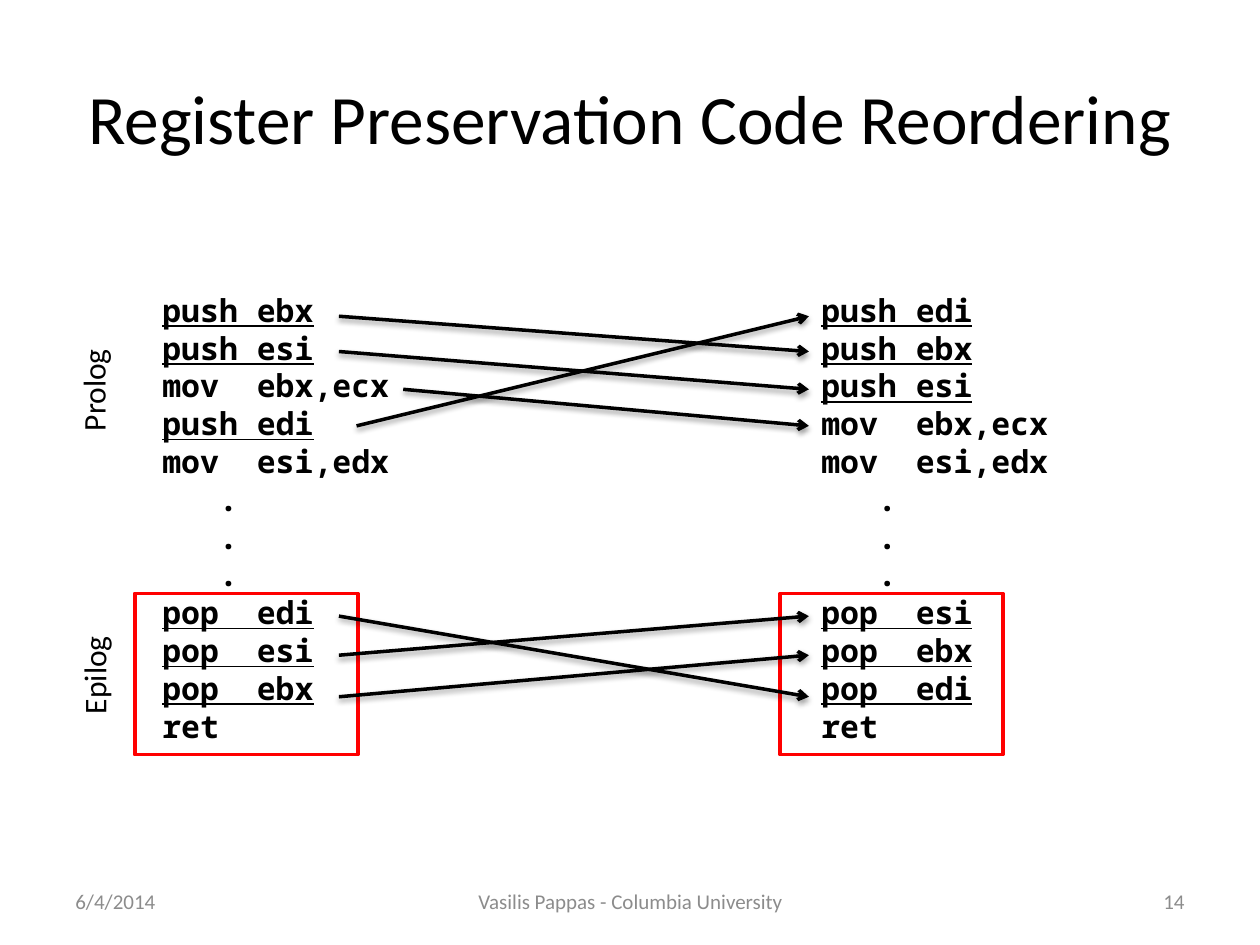
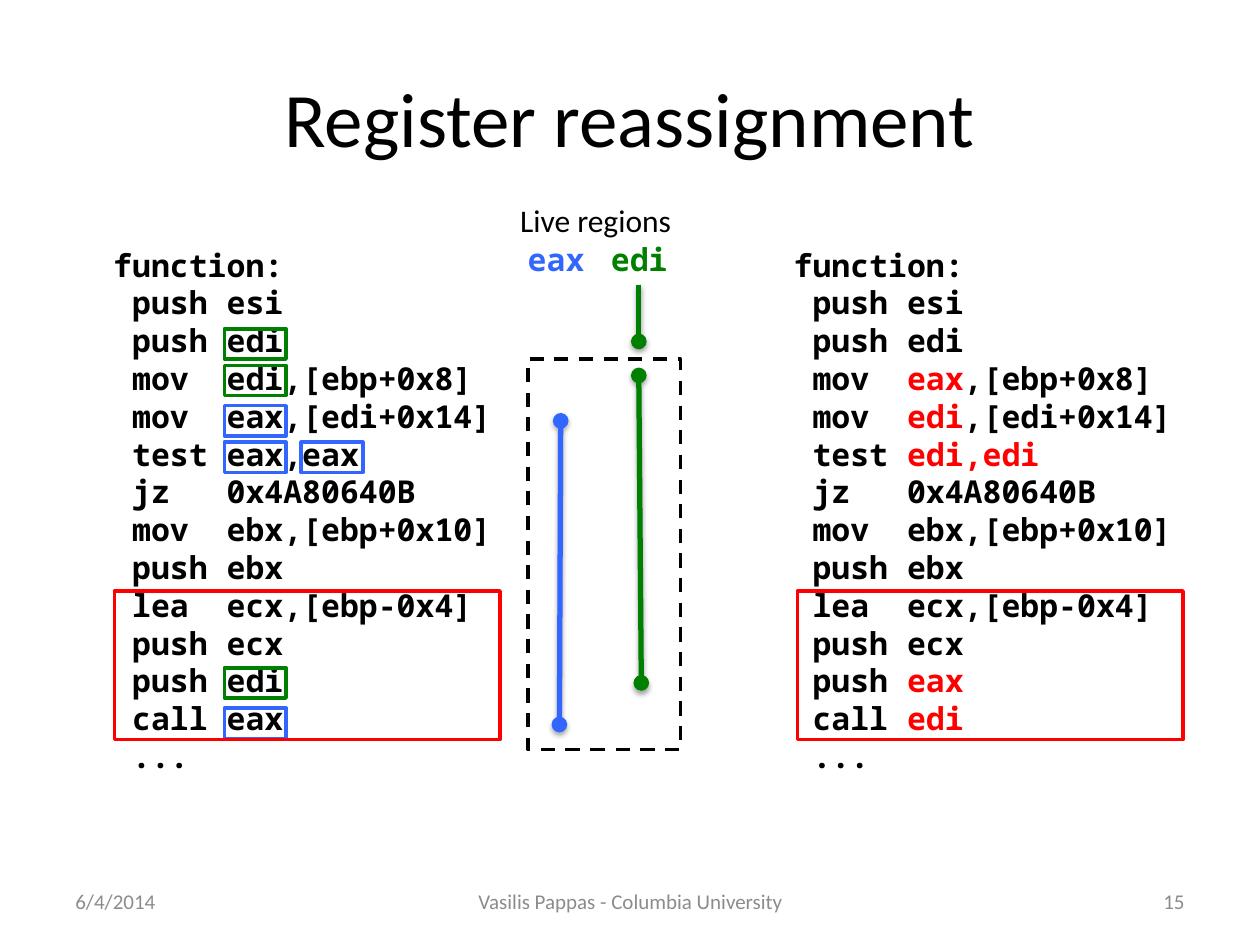
from lxml.etree import SubElement as Sub
from pptx import Presentation
from pptx.dml.color import RGBColor as RGB
from pptx.enum.dml import MSO_LINE as Dash
from pptx.enum.shapes import MSO_CONNECTOR as Conn, MSO_SHAPE as Form
from pptx.enum.text import MSO_ANCHOR as Anchor, PP_ALIGN as Align
from pptx.oxml.ns import qn
from pptx.util import Inches, Pt

HUES = {"ink": "000000", "gray": "8C8C8C", "red": "FF0000",
        "blue": "3366FF", "green": "008000"}
SANS = {"name": "Calibri", "size": Pt(18)}
MONO = {"name": "Noto Sans Mono", "size": Pt(18), "bold": True}
SMALL = SANS | {"size": Pt(12)}
CHAR = 0.15  # width of one code character, in inches


def rgb(hue):
    return RGB.from_string(HUES[hue])


class Deck:
    """Holds the style and the current slide."""

    def __init__(self):
        self.prs = Presentation()
        self.prs.slide_width, self.prs.slide_height = Inches(10), Inches(7.5)
        self.slide = None

    def page(self, title, number, size=44):
        self.slide = self.prs.slides.add_slide(self.prs.slide_layouts[6])
        self.text((0.5, 0.3, 9, 1.25), title, SANS | {"size": Pt(size)},
                  align=Align.CENTER, anchor=Anchor.MIDDLE)
        feet = (((0.5, 2.33), "6/4/2014", Align.LEFT),
                ((3.42, 3.17), "Vasilis Pappas - Columbia University", Align.CENTER),
                ((7.17, 2.33), str(number), Align.RIGHT))
        for (left, width), words, align in feet:
            self.text((left, 6.95, width, 0.4), words, SMALL, "gray",
                      align=align, anchor=Anchor.MIDDLE)

    def frame(self, at, anchor=Anchor.TOP, wrap=True):
        box = self.slide.shapes.add_textbox(*map(Inches, at))
        box.text_frame.word_wrap = wrap
        box.text_frame.vertical_anchor = anchor
        return box

    def run(self, para, words, style, hue="ink"):
        run = para.add_run()
        run.text = words
        for key, value in style.items():
            setattr(run.font, key, value)
        run.font.color.rgb = rgb(hue)

    def text(self, at, words, style=SANS, hue="ink", align=Align.LEFT,
             anchor=Anchor.TOP, wrap=True, turn=0):
        box = self.frame(at, anchor, wrap)
        box.rotation = turn
        para = box.text_frame.paragraphs[0]
        para.alignment = align
        self.run(para, words, style, hue)

    def code(self, at, lines, marked=()):
        """Leading spaces become indents; words between stars turn red."""
        body = self.frame(at).text_frame
        for row, line in enumerate(lines):
            para = body.paragraphs[0] if row == 0 else body.add_paragraph()
            words = line.lstrip()
            indent = len(line) - len(words)
            para._p.get_or_add_pPr().set("marL", str(Inches(indent * CHAR)))
            style = MONO | {"underline": words.split()[0] in marked}
            for part, piece in enumerate(words.split("*")):
                if piece:
                    self.run(para, piece, style, "red" if part % 2 else "ink")

    def rect(self, at, hue="red", dash=None):
        box = self.slide.shapes.add_shape(Form.RECTANGLE, *map(Inches, at))
        box.shadow.inherit = False
        box.fill.background()
        box.line.color.rgb = rgb(hue)
        box.line.width = Pt(2)
        if dash:
            box.line.dash_style = dash

    def line(self, start, end, hue="ink", width=2, head=None, tail="arrow"):
        link = self.slide.shapes.add_connector(
            Conn.STRAIGHT, *map(Inches, start + end))
        link.line.color.rgb = rgb(hue)
        link.line.width = Pt(width)
        stroke = link.line._get_or_add_ln()
        for tag, kind in (("a:headEnd", head), ("a:tailEnd", tail)):
            if kind:
                Sub(stroke, qn(tag), type=kind)
        # Soft shadow straight below the line
        glow = Sub(Sub(link._element.spPr, qn("a:effectLst")), qn("a:outerShdw"),
                   blurRad=str(Pt(3.1)), dist=str(Pt(1.7)), dir="5400000",
                   rotWithShape="0")
        tint = Sub(glow, qn("a:srgbClr"), val=HUES["ink"])
        Sub(tint, qn("a:alpha"), val="37000")


def reorder(deck):
    deck.page("Register Preservation Code Reordering", 14, 39.6)
    body = ["mov  esi,edx"] + ["   ."] * 3
    before = ["push ebx", "push esi", "mov  ebx,ecx", "push edi", *body,
              "pop  edi", "pop  esi", "pop  ebx", "ret"]
    after = ["push edi", "push ebx", "push esi", "mov  ebx,ecx", *body,
             "pop  esi", "pop  ebx", "pop  edi", "ret"]

    # Code columns with the epilog framed
    for left, edge, lines in ((1.19, 1.07, before), (6.42, 6.19, after)):
        deck.code((left, 2.26, 2.46, 3.74), lines, ("push", "pop"))
        deck.rect((edge, 4.71, 1.77, 1.28))

    # Each moved instruction points to its new row
    rows = {0: 2.51, 1: 2.79, 2: 3.09, 3: 3.38, 8: 4.89, 9: 5.2, 10: 5.53}
    starts = {2: 3.2, 3: 2.83}
    for row, top in rows.items():
        goal = rows[after.index(before[row])]
        deck.line((starts.get(row, 2.69), top), (6.42, goal))

    # Side labels
    for at, words in (((0.31, 2.89, 0.86, 0.4), "Prolog"),
                      ((0.33, 5.15, 0.83, 0.4), "Epilog")):
        deck.text(at, words, wrap=False, turn=270)


def reassign(deck):
    deck.page("Register reassignment", 15)

    # Live regions
    deck.line((4.45, 3.34), (4.44, 5.75), "blue", 3, "oval", "oval")
    deck.line((5.07, 2.98), (5.09, 5.42), "green", 3, "oval", "oval")
    deck.line((5.07, 2.26), (5.07, 2.71), "green", 3, tail="oval")
    deck.text((4.03, 1.55, 1.42, 0.4), "Live regions", wrap=False)
    for left, name, hue in ((4.09, "eax", "blue"), (4.75, "edi", "green")):
        deck.text((left, 1.86, 0.66, 0.4), name, MONO, hue, wrap=False)
    deck.rect((4.19, 2.85, 1.21, 3.1), "ink", Dash.DASH)

    # Code before and after the swap
    before = ["function:", " push esi", " push edi", " mov  edi,[ebp+0x8]",
              " mov  eax,[edi+0x14]", " test eax,eax", " jz   0x4A80640B",
              " mov  ebx,[ebp+0x10]", " push ebx", " lea  ecx,[ebp-0x4]",
              " push ecx", " push edi", " call eax", " ..."]
    swaps = {3: " mov  *eax*,[ebp+0x8]", 4: " mov  *edi*,[edi+0x14]",
             5: " test *edi,edi*", 11: " push *eax*", 12: " call *edi*"}
    after = [swaps.get(row, line) for row, line in enumerate(before)]
    deck.code((0.8, 1.9, 3.29, 4.34), before)
    deck.code((6.2, 1.9, 3.29, 4.34), after)

    # Boxes around the registers, then around the gadget
    spots = {"blue": ((1.78, 5.62), (1.78, 3.51), (2.39, 3.51), (1.78, 3.22)),
             "green": ((1.78, 5.3), (1.78, 2.9), (1.78, 2.61))}
    for hue, places in spots.items():
        for left, top in places:
            deck.rect((left, top, 0.49, 0.24), hue)
    for left in (0.91, 6.33):
        deck.rect((left, 4.69, 3.06, 1.18))


def main():
    deck = Deck()
    reorder(deck)
    reassign(deck)
    deck.prs.save("out.pptx")


if __name__ == "__main__":
    main()
